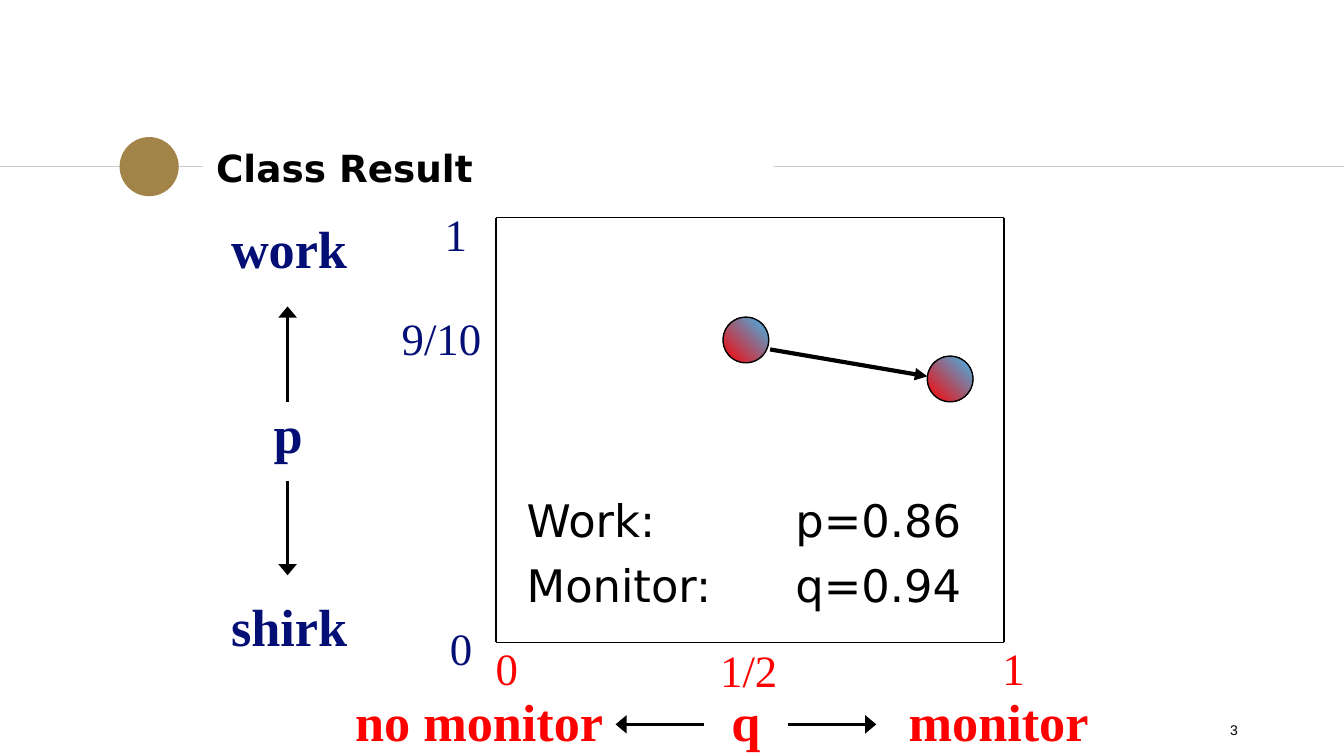
from lxml import etree
from pptx import Presentation
from pptx import util as u
from pptx.dml.color import RGBColor
from pptx.enum import shapes, text
from pptx.oxml.ns import qn

BLACK = RGBColor(0, 0, 0)
GREY = RGBColor(0xCC, 0xCC, 0xCC)
GOLD = RGBColor(0xA2, 0x84, 0x48)
RED = RGBColor(0xFF, 0, 0)
NAVY = RGBColor(0x04, 0x0F, 0x76)
SKY = RGBColor(0x3E, 0xBB, 0xF0)

LEFT, MID, RIGHT = text.PP_ALIGN.LEFT, text.PP_ALIGN.CENTER, text.PP_ALIGN.RIGHT
SERIF, SANS = "Times New Roman", "DejaVu Sans"
TICK = dict(name=SERIF, size=u.Pt(24))
NAME = dict(name=SERIF, size=u.Pt(28), bold=True)


def add_line(slide, x1, y1, x2, y2, color=BLACK, width=0.75, head=None):
    """Straight line; head is the breadth of its arrowhead, if any."""
    line = slide.shapes.add_connector(
        shapes.MSO_CONNECTOR.STRAIGHT, *map(u.Inches, (x1, y1, x2, y2)))
    line.line.color.rgb = color
    line.line.width = u.Pt(width)
    if head:
        etree.SubElement(line.line._get_or_add_ln(), qn("a:tailEnd"),
                         type="triangle", w=head)
    etree.SubElement(line._element.spPr, qn("a:effectLst"))


def add_text(slide, box, lines, font, color=BLACK, align=LEFT, **frame):
    area = slide.shapes.add_textbox(*map(u.Inches, box)).text_frame
    area.word_wrap = True
    for key, value in frame.items():
        setattr(area, key, value)
    area.text = lines
    for para in area.paragraphs:
        para.alignment = align
        for run in para.runs:
            run.font.color.rgb = color
            for key, value in font.items():
                setattr(run.font, key, value)
    return area


def add_label(slide, box, words, font, color, align=MID):
    """One axis word or tick, spaced by half a line."""
    area = add_text(slide, box, words, font, color, align)
    gap = etree.SubElement(area.paragraphs[0]._p.get_or_add_pPr(), qn("a:spcBef"))
    etree.SubElement(gap, qn("a:spcPct"), val="50000")


def add_disc(slide, x, y, size):
    disc = slide.shapes.add_shape(
        shapes.MSO_SHAPE.OVAL, *map(u.Inches, (x, y, size, size)))
    disc.shadow.inherit = False
    return disc


def add_dot(slide, x, y):
    dot = add_disc(slide, x, y, 0.34)
    dot.fill.gradient()
    dot.fill.gradient_angle = 45
    for stop, color in zip(dot.fill.gradient_stops, (RED, SKY)):
        stop.color.rgb = color
    dot.line.color.rgb = BLACK
    dot.line.width = u.Pt(0.75)


def header(slide, x, y, w):
    """Rule across the slide, broken by the title; y is the rule's height."""
    add_line(slide, x, y, x + 1.51, y, GREY)
    disc = add_disc(slide, x + 0.89, y - 0.22, 0.44)
    disc.fill.solid()
    disc.fill.fore_color.rgb = GOLD
    disc.line.fill.background()
    add_line(slide, x + 5.76, y, x + w, y, GREY)
    add_text(slide, (x + 1.51, y - 0.23, 4.24, 0.48), "Class Result",
             dict(name=SANS, size=u.Pt(20), bold=True),
             vertical_anchor=text.MSO_ANCHOR.MIDDLE,
             margin_top=u.Inches(0.1), margin_bottom=u.Inches(0.1))


def plot(slide, x, y, w, h):
    # Frame
    ends = [(x, y), (x, y + h), (x + w, y + h), (x + w, y)]
    for start, end in zip(ends, ends[1:] + ends[:1]):
        add_line(slide, *start, *end)

    # Ticks: q below, p on the left
    for dx, dy, wide, words in ((-0.1, -0.06, 0.27, "0"), (1.57, -0.05, 0.74, "1/2"),
                                (3.67, -0.06, 0.27, "1")):
        add_label(slide, (x + dx, y + h + dy, wide, 0.5), words, TICK, RED, LEFT)
    for dx, dy, wide, high, words in ((-0.44, 2.95, 0.27, 0.41, "0"),
                                      (-0.82, 0.64, 0.83, 0.5, "9/10"),
                                      (-0.48, -0.13, 0.34, 0.41, "1")):
        add_label(slide, (x + dx, y + dy, wide, high), words, TICK, NAVY)

    # Move from the predicted point to the class result
    add_line(slide, x + 2.04, y + 0.98, x + 3.21, y + 1.18, width=2.25, head="med")
    add_dot(slide, x + 3.21, y + 1.03)
    add_dot(slide, x + 1.69, y + 0.74)

    # Result, with the values on a tab stop
    area = add_text(slide, (x + 0.13, y + 2, 3.78, 0.99),
                    "Work:\tp=0.86\nMonitor:\tq=0.94", dict(name=SANS, size=u.Pt(24)))
    for para in area.paragraphs:
        para.space_before = u.Pt(6)
        tabs = etree.SubElement(para._p.get_or_add_pPr(), qn("a:tabLst"))
        etree.SubElement(tabs, qn("a:tab"), pos=str(u.Inches(2)), algn="l")


def p_axis(slide, x, y):
    """Upright axis; x is the right edge of its words."""
    for dy, wide, high, back, words in ((0, 1.45, 0.57, 0, "work"),
                                        (1.38, 0.44, 0.5, 0.33, "p"),
                                        (2.81, 1.29, 0.57, 0, "shirk")):
        add_label(slide, (x - back - wide, y + dy, wide, high), words, NAME, NAVY, RIGHT)
    for start, end in ((1.43, 0.72), (2.02, 2.72)):
        add_line(slide, x - 0.54, y + start, x - 0.54, y + end, width=1.5, head="lg")


def q_axis(slide, x, y):
    for dx, wide, words in ((0, 2.41, "no monitor"), (2.89, 0.6, "q"),
                            (4.21, 1.72, "monitor")):
        add_label(slide, (x + dx, y, wide, 0.57), words, NAME, RED)
    for start, end in ((2.88, 2.22), (3.5, 4.16)):
        add_line(slide, x + start, y + 0.31, x + end, y + 0.31, width=1.5, head="lg")


def footer(slide, x, y, w, h):
    add_text(slide, (x, y, w, h), "3", dict(name="Arial", size=u.Pt(7.5)),
             align=RIGHT, vertical_anchor=text.MSO_ANCHOR.MIDDLE,
             margin_top=u.Inches(0.19))


def main():
    deck = Presentation()
    deck.slide_width = u.Inches(10)
    deck.slide_height = deck.slide_width * 9 // 16
    slide = deck.slides.add_slide(deck.slide_layouts[6])
    header(slide, 0, 1.24, 10)
    plot(slide, 3.69, 1.62, 3.78, 3.16)
    p_axis(slide, 2.68, 1.56)
    q_axis(slide, 2.36, 5.08)
    footer(slide, 7.06, 5.21, 2.25, 0.3)
    deck.save("out.pptx")


if __name__ == "__main__":
    main()
